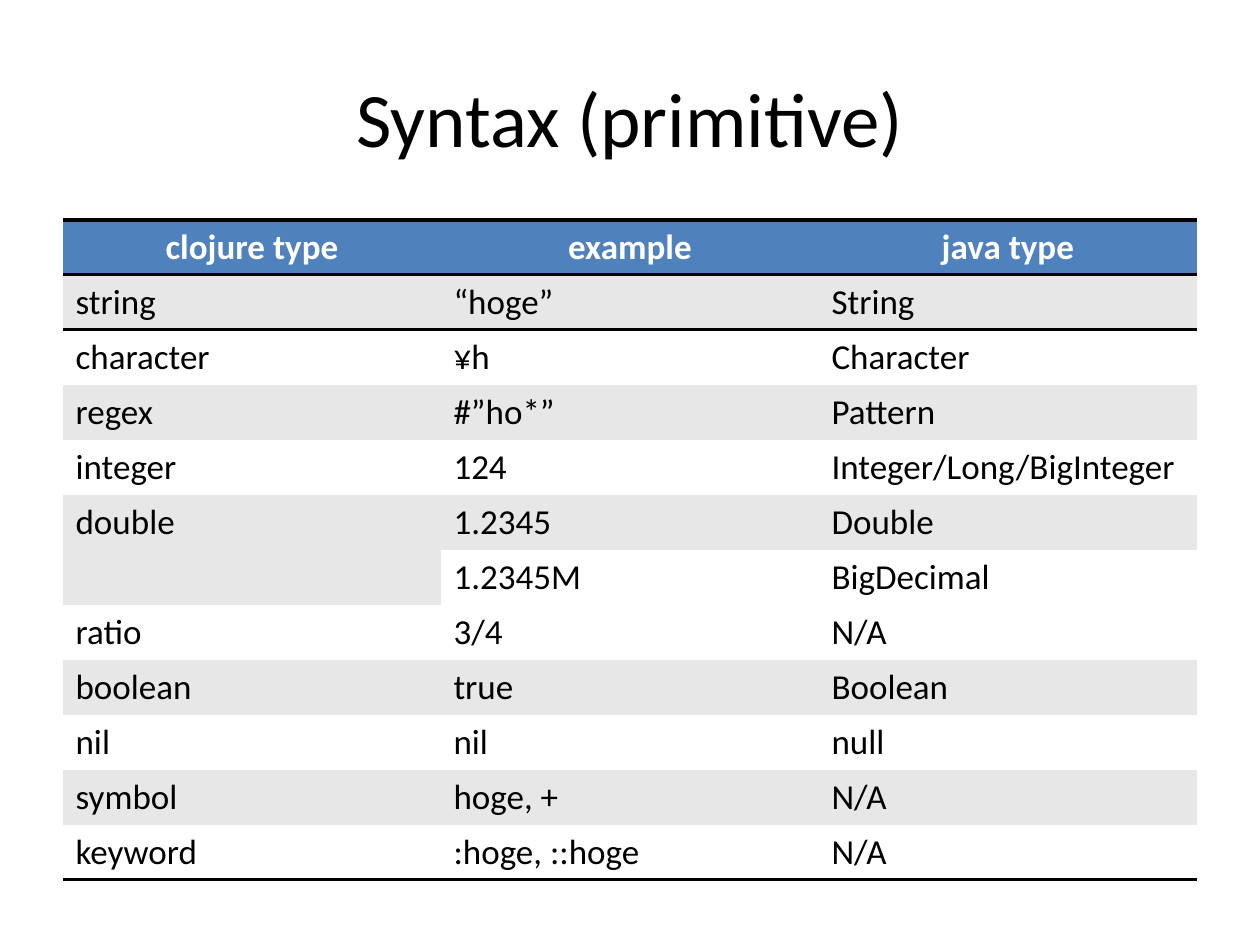
from lxml.etree import SubElement
from pptx import Presentation
from pptx.dml.color import RGBColor
from pptx.enum.text import MSO_ANCHOR as Anchor, PP_ALIGN as Align
from pptx.oxml.ns import qn
from pptx.util import Pt

# Content: each type owns one or more (example, java type) rows
TITLE = "Syntax (primitive)"
HEADERS = ["clojure type", "example", "java type"]
TYPES = [
    ("string", [("“hoge”", "String")]),
    ("character", [("¥h", "Character")]),
    ("regex", [("#”ho*”", "Pattern")]),
    ("integer", [("124", "Integer/Long/BigInteger")]),
    ("double", [("1.2345", "Double"), ("1.2345M", "BigDecimal")]),
    ("ratio", [("3/4", "N/A")]),
    ("boolean", [("true", "Boolean")]),
    ("nil", [("nil", "null")]),
    ("symbol", [("hoge, +", "N/A")]),
    ("keyword", [(":hoge, ::hoge", "N/A")]),
]

# Formats
BLACK, WHITE, BLUE, GREY = "000000", "FFFFFF", "4F81BD", "E7E7E7"
TITLE_FONT = {"name": "Calibri", "size": Pt(44), "bold": False}
HEADER_FONT = {"name": "Calibri", "size": Pt(20), "bold": True}
BODY_FONT = {**HEADER_FONT, "bold": False}
NO_STYLE = "{2D5ABB26-0587-4C30-8999-92F81FD0307C}"

# Layout in px, 126 to the inch
SCALE = 914400 // 126
LEFT, WIDTH = 63, 1134
TITLE_TOP, TITLE_HEIGHT = 38, 157
TABLE_TOP, ROW_HEIGHT = 220, 55


def px(*lengths):
    return [length * SCALE for length in lengths]


def color(hex_code):
    return RGBColor.from_string(hex_code)


def write(frame, text, font, font_color, align):
    paragraph = frame.paragraphs[0]
    paragraph.alignment = align
    run = paragraph.add_run()
    run.text = text
    for name, value in font.items():
        setattr(run.font, name, value)
    run.font.color.rgb = color(font_color)


def add_border(cell, side):
    properties = cell._tc.get_or_add_tcPr()
    line = SubElement(properties, qn(f"a:ln{side}"), w=str(Pt(2)))
    fill = SubElement(line, qn("a:solidFill"))
    SubElement(fill, qn("a:srgbClr"), val=BLACK)


def fill_cell(cell, text, fill, font=BODY_FONT, font_color=BLACK,
              align=Align.LEFT, borders=""):
    for side in borders:
        add_border(cell, side)
    cell.fill.solid()
    cell.fill.fore_color.rgb = color(fill)
    if text:
        write(cell.text_frame, text, font, font_color, align)


presentation = Presentation()
presentation.slide_width, presentation.slide_height = px(1260, 945)
slide = presentation.slides.add_slide(presentation.slide_layouts[6])

# Title
title = slide.shapes.add_textbox(*px(LEFT, TITLE_TOP, WIDTH, TITLE_HEIGHT))
title.text_frame.word_wrap = True
title.text_frame.vertical_anchor = Anchor.MIDDLE
write(title.text_frame, TITLE, TITLE_FONT, BLACK, Align.CENTER)

# Table
row_count = 1 + sum(len(rows) for _, rows in TYPES)
table_shape = slide.shapes.add_table(
    row_count, len(HEADERS),
    *px(LEFT, TABLE_TOP, WIDTH, ROW_HEIGHT * row_count))
table = table_shape.table
table.first_row = table.horz_banding = False
next(table_shape._element.iter(qn("a:tableStyleId"))).text = NO_STYLE

# Header row
for column, header in enumerate(HEADERS):
    fill_cell(table.cell(0, column), header, BLUE, HEADER_FONT, WHITE,
              Align.CENTER, "TB")

# Body rows: shading alternates by type, extra rows of a type stay white
row = 1
for index, (type_name, examples) in enumerate(TYPES):
    band = WHITE if index % 2 else GREY
    if len(examples) > 1:
        table.cell(row, 0).merge(table.cell(row + len(examples) - 1, 0))
    for offset, example in enumerate(examples):
        name = "" if offset else type_name
        borders = {1: "T", row_count - 1: "B"}.get(row, "")
        for column, text in enumerate((name, *example)):
            fill = WHITE if offset and column else band
            fill_cell(table.cell(row, column), text, fill, borders=borders)
        row += 1

presentation.save("out.pptx")
